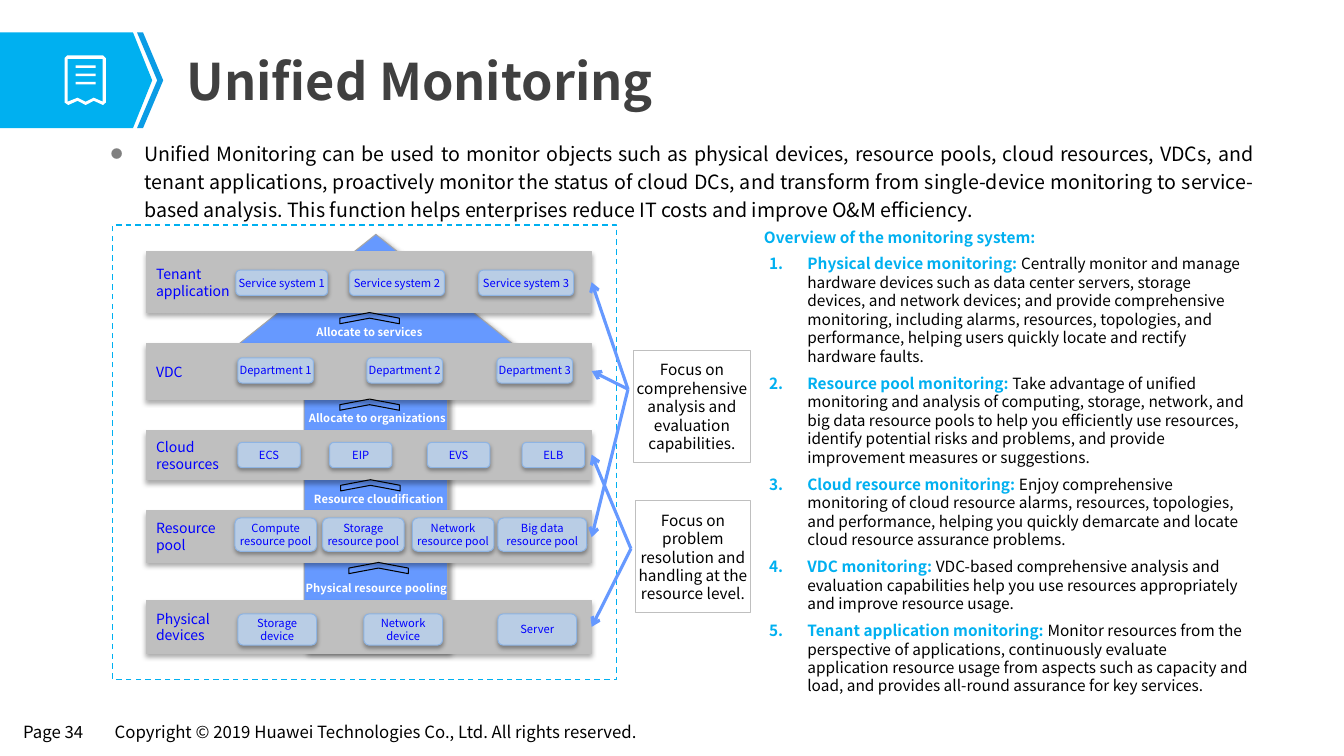
from dataclasses import dataclass

from lxml import etree
from pptx import Presentation
from pptx.dml.color import RGBColor
from pptx.enum.dml import MSO_LINE
from pptx.enum.shapes import MSO_CONNECTOR, MSO_SHAPE
from pptx.enum.text import MSO_ANCHOR, MSO_AUTO_SIZE, PP_ALIGN
from pptx.oxml.ns import qn
from pptx.util import Pt

RECT, ROUND = MSO_SHAPE.RECTANGLE, MSO_SHAPE.ROUNDED_RECTANGLE
CHEVRON, ARROW = MSO_SHAPE.CHEVRON, MSO_SHAPE.RIGHT_ARROW
LEFT, CENTER, JUSTIFY = PP_ALIGN.LEFT, PP_ALIGN.CENTER, PP_ALIGN.JUSTIFY
TOP, MIDDLE = MSO_ANCHOR.TOP, MSO_ANCHOR.MIDDLE
NO_FIT, STRAIGHT, DASH = MSO_AUTO_SIZE.NONE, MSO_CONNECTOR.STRAIGHT, MSO_LINE.DASH


@dataclass(frozen=True)
class Theme:
    font: str = "Noto Sans CJK SC"
    black: str = "000000"
    white: str = "FFFFFF"
    title: str = "404040"
    bullet: str = "808080"
    cyan: str = "00B0F0"
    deep_cyan: str = "0B9CE5"
    arrow: str = "6699FF"
    arrow_edge: str = "A6A6A6"
    band: str = "BFBFBF"
    card: str = "B9CDE5"
    card_edge: str = "8EB4E3"
    label: str = "0000FF"
    title_size: int = 36
    body_size: int = 14
    footer_size: int = 12
    text_size: int = 11
    band_size: int = 10
    card_size: int = 8


T = Theme()
BAND_SHADOW = (32, 3.5, 2.2, 90)
CARD_SHADOW = (35, 3.1, 1.8, 90)
ARROW_SHADOW = (40, 4, 3, 45)
NO_INSETS = (0, 0, 0, 0)
BOX_INSETS = (7.2, 3.6, 7.2, 3.6)


def apply(obj, fmt):
    for name, value in fmt.items():
        setattr(obj, name, value)


def sub(parent, tag, **attrs):
    return etree.SubElement(parent, qn(tag), {k: str(v) for k, v in attrs.items()})


class SlideBuilder:
    def __init__(self, prs, theme):
        self.theme = theme
        self.s = prs.slides.add_slide(prs.slide_layouts[1])

    def set_text(self, sp, paras, size, color, bold=False, align=LEFT, anchor=TOP,
                 insets=BOX_INSETS, wrap=True, space=0, spacing=1.0):
        tf = sp.text_frame
        apply(tf, {"word_wrap": wrap, "auto_size": NO_FIT, "vertical_anchor": anchor})
        sides = ("margin_left", "margin_top", "margin_right", "margin_bottom")
        apply(tf, {side: Pt(v) for side, v in zip(sides, insets)})
        for i, runs in enumerate(paras):
            p = tf.paragraphs[0] if i == 0 else tf.add_paragraph()
            apply(p, {"alignment": align, "line_spacing": spacing,
                      "space_before": Pt(space if i else 0)})
            for text, run_color, run_bold in ([(runs, color, bold)] if isinstance(runs, str) else runs):
                r = p.add_run()
                r.text = text
                apply(r.font, {"name": self.theme.font, "size": Pt(size), "bold": run_bold})
                r.font.color.rgb = RGBColor.from_string(run_color)
        return tf

    def placeholder(self, index, box, paras, size, color, **style):
        sp = self.s.placeholders[index]
        apply(sp, {k: Pt(v) for k, v in zip(("left", "top", "width", "height"), box)})
        return self.set_text(sp, paras, size, color, **style)

    def text(self, box, paras, size, color, **style):
        sp = self.s.shapes.add_textbox(*map(Pt, box))
        return self.set_text(sp, paras, size, color, **style)

    def paint(self, sp, fill=None, line=None, width=0.75, shadow=None):
        sp.shadow.inherit = False
        if fill:
            sp.fill.solid()
            sp.fill.fore_color.rgb = RGBColor.from_string(fill)
        else:
            sp.fill.background()
        if line:
            sp.line.color.rgb = RGBColor.from_string(line)
            sp.line.width = Pt(width)
        else:
            sp.line.fill.background()
        if shadow:
            alpha, blur, dist, angle = shadow
            effects = sp._element.spPr.find(qn("a:effectLst"))
            outer = sub(effects, "a:outerShdw", blurRad=Pt(blur), dist=Pt(dist),
                        dir=angle * 60000, rotWithShape=0)
            sub(sub(outer, "a:srgbClr", val=self.theme.black), "a:alpha", val=alpha * 1000)

    def shape(self, kind, box, rotation=0, **look):
        sp = self.s.shapes.add_shape(kind, *map(Pt, box))
        sp.rotation = rotation
        self.paint(sp, **look)
        return sp

    def outline(self, contours, fill):
        start = contours[0][0]
        fb = self.s.shapes.build_freeform(*map(Pt, start))
        for i, (first, *rest) in enumerate(contours):
            if i:
                fb.move_to(*map(Pt, first))
            fb.add_line_segments([tuple(map(Pt, pt)) for pt in rest], close=True)
        self.paint(fb.convert_to_shape(), fill=fill)

    def connector(self, start, end, color, width):
        c = self.s.shapes.add_connector(STRAIGHT, *map(Pt, start + end))
        c.line.color.rgb = RGBColor.from_string(color)
        c.line.width = Pt(width)
        spPr = c._element.spPr
        sub(spPr.find(qn("a:ln")), "a:tailEnd", type="arrow")
        sub(spPr, "a:effectLst")

    def bullet(self, p, indent, hang, char=None):
        pPr = p._p.get_or_add_pPr()
        pPr.set("marL", str(Pt(indent)))
        pPr.set("indent", str(-Pt(hang)))
        if char:
            sub(sub(pPr, "a:buClr"), "a:srgbClr", val=self.theme.bullet)
            sub(pPr, "a:buSzPct", val=60000)
            sub(pPr, "a:buFont", typeface=self.theme.font)
            sub(pPr, "a:buChar", char=char)
        else:
            sub(pPr, "a:buFont", typeface="+mj-lt")
            sub(pPr, "a:buAutoNum", type="arabicPeriod")


FOOTERS = [(9.4, 60, "Page 34"),
           (74.9, 404, "Copyright © 2019 Huawei Technologies Co., Ltd. All rights reserved.")]
INTRO = "Unified Monitoring can be used to monitor objects such as physical devices, resource pools, cloud resources, VDCs, and tenant applications, proactively monitor the status of cloud DCs, and transform from single-device monitoring to service-based analysis. This function helps enterprises reduce IT costs and improve O&M efficiency."
OVERVIEW = [
    ("Physical device monitoring: ", "Centrally monitor and manage hardware devices such as data center servers, storage devices, and network devices; and provide comprehensive monitoring, including alarms, resources, topologies, and performance, helping users quickly locate and rectify hardware faults."),
    ("Resource pool monitoring: ", "Take advantage of unified monitoring and analysis of computing, storage, network, and big data resource pools to help you efficiently use resources, identify potential risks and problems, and provide improvement measures or suggestions."),
    ("Cloud resource monitoring: ", "Enjoy comprehensive monitoring of cloud resource alarms, resources, topologies, and performance, helping you quickly demarcate and locate cloud resource assurance problems."),
    ("VDC monitoring: ", "VDC-based comprehensive analysis and evaluation capabilities help you use resources appropriately and improve resource usage."),
    ("Tenant application monitoring: ", "Monitor resources from the perspective of applications, continuously evaluate application resource usage from aspects such as capacity and load, and provides all-round assurance for key services."),
]
LAYERS = [
    (["Tenant", "application"], 180, 43.2, 193, 18,
     [("Service system 1", 168.5, 65.5), ("Service system 2", 249.8, 67.7), ("Service system 3", 342, 67.7)]),
    (["VDC"], 245.5, 39.6, 255.6, 18,
     [("Department 1", 169.9, 54), ("Department 2", 262.1, 54), ("Department 3", 355, 54)]),
    (["Cloud", "resources"], 307.4, 35.3, 316, 18,
     [("ECS", 169.9, 44.6), ("EIP", 235.4, 44.6), ("EVS", 305.3, 44.6), ("ELB", 373, 44.6)]),
    (["Resource", "pool"], 365, 36.7, 370, 23.8,
     [("Compute resource pool", 167.8, 58.3), ("Storage resource pool", 230.4, 58.3),
      ("Network resource pool", 294.5, 58.3), ("Big data resource pool", 355.7, 63.4)]),
    (["Physical", "devices"], 429.1, 37.4, 438.5, 22.3,
     [("Storage device", 169.9, 56.2), ("Network device", 259.9, 56.2), ("Server", 355.7, 56.2)]),
]
STEPS = [("Allocate to services", 263.9, 232.6, 260, 206),
         ("Allocate to organizations", 269.6, 293.8, 260, 267.8),
         ("Resource cloudification", 270.7, 351.4, 260.6, 325.4),
         ("Physical resource pooling", 268.9, 415.4, 266.4, 384.5)]
FOCUSES = [("Focus on problem resolution and handling at the resource level.",
            (453.6, 357.8, 82.8, 80), (450.7, 392), (324.7, 447.8)),
           ("Focus on comprehensive analysis and evaluation capabilities.",
            (452.2, 250.6, 84.2, 80), (448.6, 278), (383.8, 265, 201.6))]


def main():
    prs = Presentation()
    prs.slide_width, prs.slide_height = Pt(960), Pt(540)
    b = SlideBuilder(prs, T)
    for x, w, line in FOOTERS:
        b.text((x, 511.9, w, 20.9), [line], T.footer_size, T.black, wrap=False)
    b.outline([[(95, 91.5), (0, 91.5), (0, 23.2), (95, 23.2), (108.7, 57.4)]], T.cyan)
    b.outline([[(102.2, 23.2), (97.9, 23.2), (112.3, 57.4), (97.9, 91.5), (102.2, 91.5), (116.6, 57.4)]], T.deep_cyan)
    b.outline([[(48, 39.6), (73.6, 39.6), (75.6, 41.6), (75.6, 73.2), (73.6, 75), (67, 72), (61.2, 75),
                (55.4, 72), (48.8, 75), (46.1, 73.2), (46.1, 41.6)],
               [(48.4, 42), (48.4, 72.6), (55.4, 69.8), (61.2, 72.7), (67, 69.8), (73.4, 72.6), (73.4, 42)]], T.white)
    b.outline([[(54, y), (68.4, y), (68.4, y + 1.8), (54, y + 1.8)] for y in (46.7, 52.7, 58.5)], T.white)
    b.placeholder(0, (125.3, 32.4, 774, 50.4), ["Unified Monitoring"], T.title_size, T.title,
                  bold=True, anchor=MIDDLE, insets=(8, 4, 8, 4))
    tf = b.placeholder(1, (72, 94.3, 831.6, 113), [INTRO], T.body_size, T.black, align=JUSTIFY, spacing=1.2)
    b.bullet(tf.paragraphs[0], 23.8, 23.8, "●")
    items = [[(head, T.cyan, True), (body, T.black, False)] for head, body in OVERVIEW]
    tf = b.text((538.6, 159.1, 361.4, 372.2), ["Overview of the monitoring system:"] + items,
                T.text_size, T.cyan, bold=True, space=6)
    for p in tf.paragraphs[1:]:
        b.bullet(p, 31, 27.4)
    sp = b.shape(ARROW, (119.5, 213.8, 298, 205.2), 270, fill=T.arrow, line=T.arrow_edge, shadow=ARROW_SHADOW)
    sp.adjustments[1] = 0.4
    b.shape(RECT, (80.6, 160.6, 360, 324.7), line=T.cyan, width=1).line.dash_style = DASH
    for label, top, h, card_top, card_h, cards in LAYERS:
        sp = b.shape(RECT, (104.4, top, 318.2, h), fill=T.band, line=T.band, shadow=BAND_SHADOW)
        b.set_text(sp, label, T.band_size, T.label, anchor=MIDDLE)
        for name, x, w in cards:
            sp = b.shape(ROUND, (x, card_top, w, card_h), fill=T.card, line=T.card_edge, shadow=CARD_SHADOW)
            b.set_text(sp, [name], T.card_size, T.label, align=CENTER, anchor=MIDDLE, insets=NO_INSETS)
    for name, mid, top, x, y in STEPS:
        b.text((mid - 60, top, 120, 16), [name], T.card_size, T.white, bold=True, align=CENTER, insets=NO_INSETS)
        b.shape(CHEVRON, (x, y, 8, 42.5), 270, line=T.black)
    for note, box, start, ends in FOCUSES:
        for y in ends:
            b.connector(start, (422.6, y), T.arrow, 2.25)
        sp = b.shape(RECT, box, line=T.band)
        b.set_text(sp, [note], T.text_size, T.black, align=CENTER, anchor=MIDDLE, insets=NO_INSETS)
    prs.save("out.pptx")


if __name__ == "__main__":
    main()
